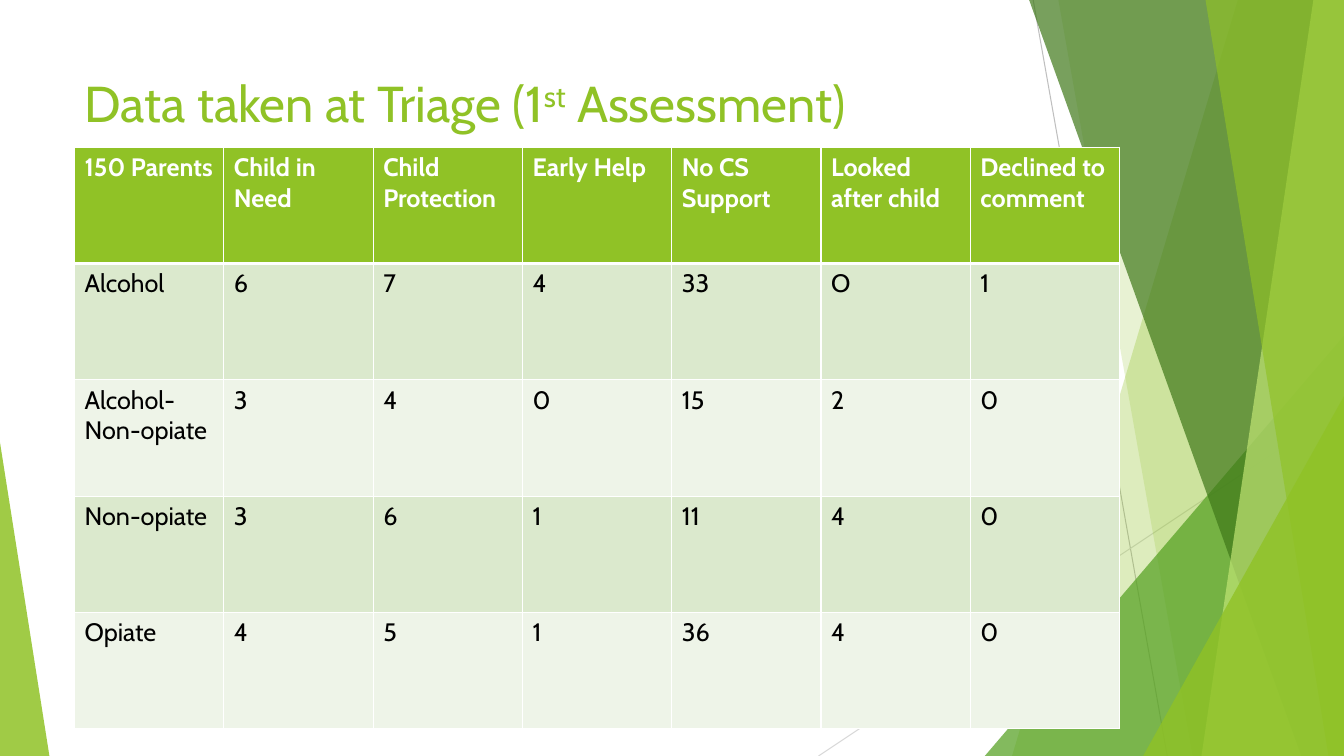
import dataclasses

import lxml.etree
import pptx
import pptx.dml.color
import pptx.enum.shapes
import pptx.enum.text
import pptx.oxml.ns
import pptx.shapes.autoshape
import pptx.slide
import pptx.table
import pptx.text.text
import pptx.util

Pt = pptx.util.Pt
RGBColor = pptx.dml.color.RGBColor
qn = pptx.oxml.ns.qn

WIDTH, HEIGHT = 960, 540
FONT = "Cabin"
WHITE = RGBColor(0xFF, 0xFF, 0xFF)
BLACK = RGBColor(0x00, 0x00, 0x00)
LIME = RGBColor(0x90, 0xC2, 0x26)
LEAF = RGBColor(0x54, 0xA0, 0x21)
FOREST = RGBColor(0x3F, 0x78, 0x19)
PALE_LIME = RGBColor(0xC0, 0xE4, 0x74)
ROW_TINTS = (RGBColor(0xDB, 0xE9, 0xCD), RGBColor(0xEE, 0xF4, 0xE8))
GREY = RGBColor(0xBF, 0xBF, 0xBF)
LIGHT_GREY = RGBColor(0xD9, 0xD9, 0xD9)


@dataclasses.dataclass(frozen=True)
class Ray:
    start: tuple[float, float]
    end: tuple[float, float]
    color: RGBColor


@dataclasses.dataclass(frozen=True)
class Band:
    """A full-height area from a slanted left edge to the right of the slide."""
    top_x: float
    bottom_x: float
    color: RGBColor
    opacity: int


@dataclasses.dataclass(frozen=True)
class Corner:
    """A right triangle standing on the bottom of the slide."""
    left: float
    top: float
    width: float
    apex: float
    color: RGBColor
    opacity: int


RAYS = (
    Ray((738, 0), (833.76, HEIGHT), GREY),
    Ray((WIDTH, 290.16), (584.64, HEIGHT), LIGHT_GREY),
)
FACETS = (
    Band(884.16, 722.88, LIME, 30),
    Band(756, 851.76, LIME, 20),
    Corner(703.44, 239.76, WIDTH - 703.44, 1, LEAF, 72),
    Band(735.12, 929.52, FOREST, 70),
    Band(938.16, 858.24, PALE_LIME, 70),
    Band(861.12, 948.96, LIME, 65),
    Corner(816.48, 282.96, WIDTH - 816.48, 1, LIME, 80),
    Corner(0, 316.08, 35.28, 0, LIME, 85),
)
TITLE_PARTS = ("Data taken at Triage (1", "st", " Assessment)")
TRIAGE_ROWS = (
    ("150 Parents", "Child in Need", "Child Protection", "Early Help",
     "No CS\nSupport", "Looked after child", "Declined to comment"),
    ("Alcohol", "6", "7", "4", "33", "O", "1"),
    ("Alcohol-Non-opiate", "3", "4", "0", "15", "2", "0"),
    ("Non-opiate", "3", "6", "1", "11", "4", "0"),
    ("Opiate", "4", "5", "1", "36", "4", "0"),
)


def draw_ray(slide: pptx.slide.Slide, ray: Ray) -> None:
    line = slide.shapes.add_connector(
        pptx.enum.shapes.MSO_CONNECTOR.STRAIGHT,
        *(Pt(length) for length in ray.start + ray.end))
    line.line.color.rgb = ray.color
    line.line.width = Pt(0.75)
    lxml.etree.SubElement(line._element.spPr, qn("a:effectLst"))


def band_shape(slide: pptx.slide.Slide, band: Band) -> pptx.shapes.autoshape.Shape:
    outline = slide.shapes.build_freeform(Pt(band.top_x), 0)
    outline.add_line_segments(
        [(Pt(x), Pt(y)) for x, y in
         ((WIDTH, 0), (WIDTH, HEIGHT), (band.bottom_x, HEIGHT))], close=True)
    return outline.convert_to_shape()


def corner_shape(slide: pptx.slide.Slide, corner: Corner) -> pptx.shapes.autoshape.Shape:
    triangle = slide.shapes.add_shape(
        pptx.enum.shapes.MSO_SHAPE.ISOSCELES_TRIANGLE, Pt(corner.left),
        Pt(corner.top), Pt(corner.width), Pt(HEIGHT - corner.top))
    triangle.adjustments[0] = corner.apex
    return triangle


def draw_facet(slide: pptx.slide.Slide, facet: Band | Corner) -> None:
    if isinstance(facet, Band):
        shape = band_shape(slide, facet)
    else:
        shape = corner_shape(slide, facet)
    shape.shadow.inherit = False
    shape.line.fill.background()
    shape.fill.solid()
    shape.fill.fore_color.rgb = facet.color
    color = shape._element.spPr.find(qn("a:solidFill"))[0]
    lxml.etree.SubElement(color, qn("a:alpha"), val=str(facet.opacity * 1000))


def format_run(run: pptx.text.text._Run, size: float, color: RGBColor, bold: bool) -> None:
    run.font.name = FONT
    run.font.size = Pt(size)
    run.font.bold = bold
    run.font.color.rgb = color


def write_title(slide: pptx.slide.Slide) -> None:
    title = slide.shapes.title
    title.left, title.top, title.width, title.height = (
        Pt(53.28), Pt(48.24), Pt(676.8), Pt(64.08))
    frame = title.text_frame
    frame.word_wrap = True
    frame.auto_size = pptx.enum.text.MSO_AUTO_SIZE.NONE
    frame.vertical_anchor = pptx.enum.text.MSO_ANCHOR.TOP
    heading = frame.paragraphs[0]
    heading.alignment = pptx.enum.text.PP_ALIGN.LEFT
    for part in TITLE_PARTS:
        run = heading.add_run()
        run.text = part
        format_run(run, 36, LIME, False)
    heading.runs[1]._r.get_or_add_rPr().set("baseline", "30000")


def border_cell(cell: pptx.table._Cell, top: float, bottom: float) -> None:
    properties = cell._tc.get_or_add_tcPr()
    for side, width in (("L", 1), ("R", 1), ("T", top), ("B", bottom)):
        border = lxml.etree.SubElement(properties, qn(f"a:ln{side}"), w=str(Pt(width)))
        fill = lxml.etree.SubElement(border, qn("a:solidFill"))
        lxml.etree.SubElement(fill, qn("a:srgbClr"), val=str(WHITE))


def draw_triage_table(slide: pptx.slide.Slide) -> None:
    table = slide.shapes.add_table(
        len(TRIAGE_ROWS), len(TRIAGE_ROWS[0]),
        Pt(53.28), Pt(105.12), Pt(746.64), Pt(415.44)).table
    for row_index, values in enumerate(TRIAGE_ROWS):
        is_header = row_index == 0
        for column_index, value in enumerate(values):
            cell = table.cell(row_index, column_index)
            border_cell(cell, 3 if row_index == 1 else 1, 3 if is_header else 1)
            cell.fill.solid()
            cell.fill.fore_color.rgb = (
                LIME if is_header else ROW_TINTS[(row_index - 1) % 2])
            cell.text_frame.text = value
            for paragraph in cell.text_frame.paragraphs:
                for run in paragraph.runs:
                    format_run(run, 18, WHITE if is_header else BLACK, is_header)


def main() -> None:
    presentation = pptx.Presentation()
    presentation.slide_width = Pt(WIDTH)
    presentation.slide_height = Pt(HEIGHT)
    slide = presentation.slides.add_slide(presentation.slide_layouts[5])
    for ray in RAYS:
        draw_ray(slide, ray)
    for facet in FACETS:
        draw_facet(slide, facet)
    write_title(slide)
    draw_triage_table(slide)
    presentation.save("out.pptx")


if __name__ == "__main__":
    main()
